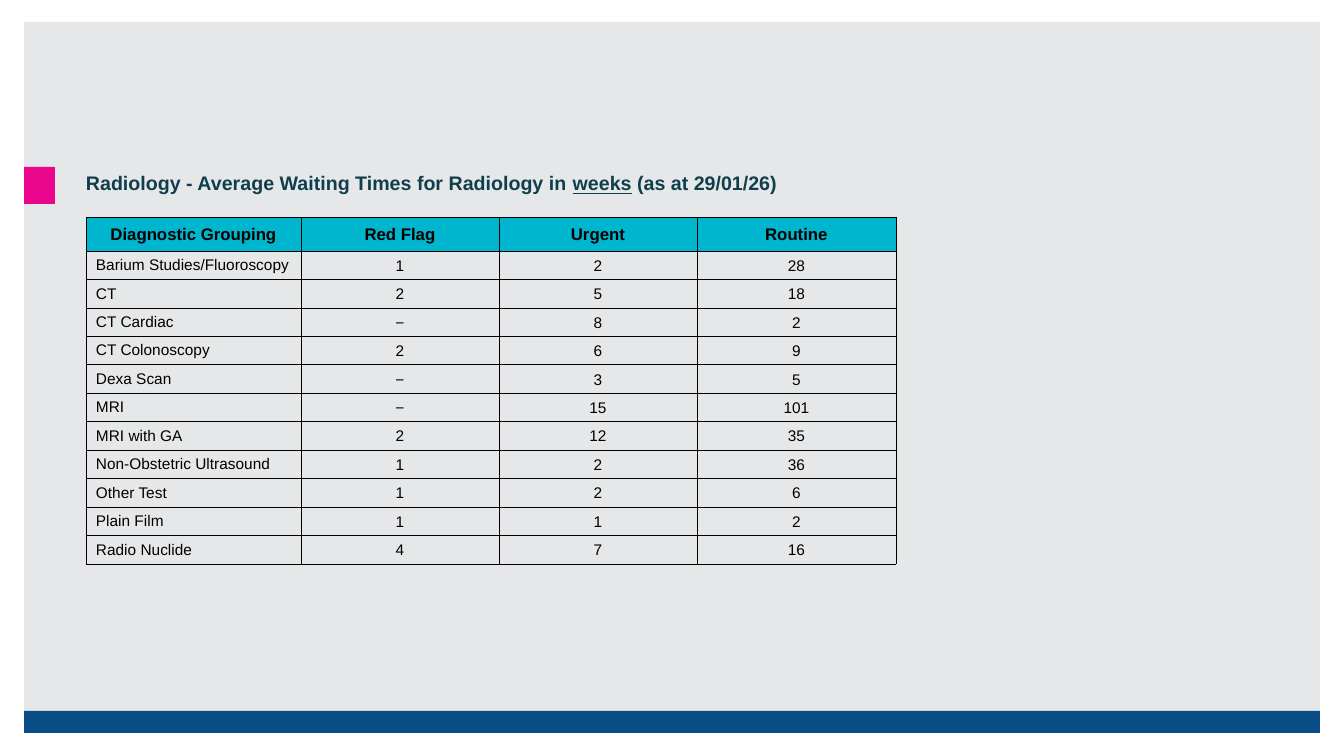
"""Build the radiology waiting times slide."""
from lxml import etree
from pptx import Presentation
from pptx.dml.color import RGBColor
from pptx.enum.shapes import MSO_SHAPE
from pptx.enum.text import MSO_ANCHOR, PP_ALIGN
from pptx.oxml.ns import qn
from pptx.util import Emu, Pt

RECTANGLE = MSO_SHAPE.RECTANGLE
TOP, MIDDLE, BOTTOM = MSO_ANCHOR.TOP, MSO_ANCHOR.MIDDLE, MSO_ANCHOR.BOTTOM
LEFT, CENTER = PP_ALIGN.LEFT, PP_ALIGN.CENTER

COLORS = {
    "panel": "E6E7E8",
    "footer": "084D85",
    "accent": "EB058C",
    "title": "0F3E4C",
    "header": "00B5CE",
    "ink": "000000",
}
FONT = "Arial"

TITLE = [
    ("Radiology - Average Waiting Times for Radiology in ", False),
    ("weeks", True),
    (" (as at 29/01/26)", False),
]
HEADERS = ["Diagnostic Grouping", "Red Flag", "Urgent", "Routine"]
WAITING_TIMES = [
    ("Barium Studies/Fluoroscopy", "1", "2", "28"),
    ("CT", "2", "5", "18"),
    ("CT Cardiac", "−", "8", "2"),
    ("CT Colonoscopy", "2", "6", "9"),
    ("Dexa Scan", "−", "3", "5"),
    ("MRI", "−", "15", "101"),
    ("MRI with GA", "2", "12", "35"),
    ("Non-Obstetric Ultrasound", "1", "2", "36"),
    ("Other Test", "1", "2", "6"),
    ("Plain Film", "1", "1", "2"),
    ("Radio Nuclide", "4", "7", "16"),
]

SLIDE_SIZE = (1344, 756)
BLOCKS = [
    ("panel", (24, 22, 1296, 711)),
    ("footer", (24, 711, 1296, 22)),
    ("accent", (24, 167, 31, 37)),
]
TITLE_BOX = (76, 169, 1172, 409)
TABLE_ORIGIN = (86, 217)
COLUMN_WIDTHS = [215, 198, 198, 199]
ROW_HEIGHTS = [34] + [28] * len(WAITING_TIMES)
HEADER_MARGINS = (1, 1, 1, 0)
LABEL_MARGINS = (10, 5, 10, 5)
VALUE_MARGINS = (1, 5, 1, 5)


def px(*lengths):
    """Turn pixel lengths into EMU."""
    return [Emu(round(length * 914400 / 100.8)) for length in lengths]


def rgb(name):
    """Return a named colour."""
    return RGBColor.from_string(COLORS[name])


def write_text(frame, runs, size, color="ink", bold=False, align=LEFT, spacing=None):
    """Write (text, underlined) runs as one paragraph."""
    paragraph = frame.paragraphs[0]
    paragraph.alignment = align
    paragraph.line_spacing = spacing
    for text, underlined in runs:
        run = paragraph.add_run()
        run.text = text
        run.font.name = FONT
        run.font.size = Pt(size)
        run.font.bold = bold
        run.font.underline = underlined
        run.font.color.rgb = rgb(color)


def add_borders(cell):
    """Draw thin lines on all four sides of a cell."""
    properties = cell._tc.get_or_add_tcPr()
    for side in ("lnL", "lnR", "lnT", "lnB"):
        line = etree.SubElement(properties, qn(f"a:{side}"), w=str(Pt(0.5)))
        fill = etree.SubElement(line, qn("a:solidFill"))
        etree.SubElement(fill, qn("a:srgbClr"), val=COLORS["ink"])


def fill_cell(cell, text, is_header, is_label):
    """Format one table cell according to its role."""
    add_borders(cell)
    if is_header:
        margins, anchor, align, size = HEADER_MARGINS, MIDDLE, CENTER, 12
        cell.fill.solid()
        cell.fill.fore_color.rgb = rgb("header")
    else:
        cell.fill.background()
        if is_label:
            margins, anchor, align, size = LABEL_MARGINS, MIDDLE, LEFT, 11
        else:
            margins, anchor, align, size = VALUE_MARGINS, BOTTOM, CENTER, 11
    cell.margin_left, cell.margin_top, cell.margin_right, cell.margin_bottom = px(*margins)
    cell.vertical_anchor = anchor
    write_text(cell.text_frame, [(text, False)], size, bold=is_header, align=align)


def add_waiting_table(slide):
    """Add the table of waiting times."""
    rows = [HEADERS, *WAITING_TIMES]
    box = px(*TABLE_ORIGIN, sum(COLUMN_WIDTHS), sum(ROW_HEIGHTS))
    table = slide.shapes.add_table(len(rows), len(HEADERS), *box).table
    table.horz_banding = False
    for column, width in zip(table.columns, px(*COLUMN_WIDTHS)):
        column.width = width
    for row, height in zip(table.rows, px(*ROW_HEIGHTS)):
        row.height = height
    for row_index, values in enumerate(rows):
        for column_index, text in enumerate(values):
            cell = table.cell(row_index, column_index)
            fill_cell(cell, text, row_index == 0, column_index == 0)


def main():
    """Build and save the presentation."""
    presentation = Presentation()
    presentation.slide_width, presentation.slide_height = px(*SLIDE_SIZE)
    slide = presentation.slides.add_slide(presentation.slide_layouts[6])
    for color, box in BLOCKS:
        shape = slide.shapes.add_shape(RECTANGLE, *px(*box))
        shape.shadow.inherit = False
        shape.fill.solid()
        shape.fill.fore_color.rgb = rgb(color)
        shape.line.fill.background()
    title_frame = slide.shapes.add_textbox(*px(*TITLE_BOX)).text_frame
    title_frame.word_wrap = True
    title_frame.vertical_anchor = TOP
    write_text(title_frame, TITLE, 14, color="title", bold=True, spacing=0.9)
    add_waiting_table(slide)
    presentation.save("out.pptx")


if __name__ == "__main__":
    main()
